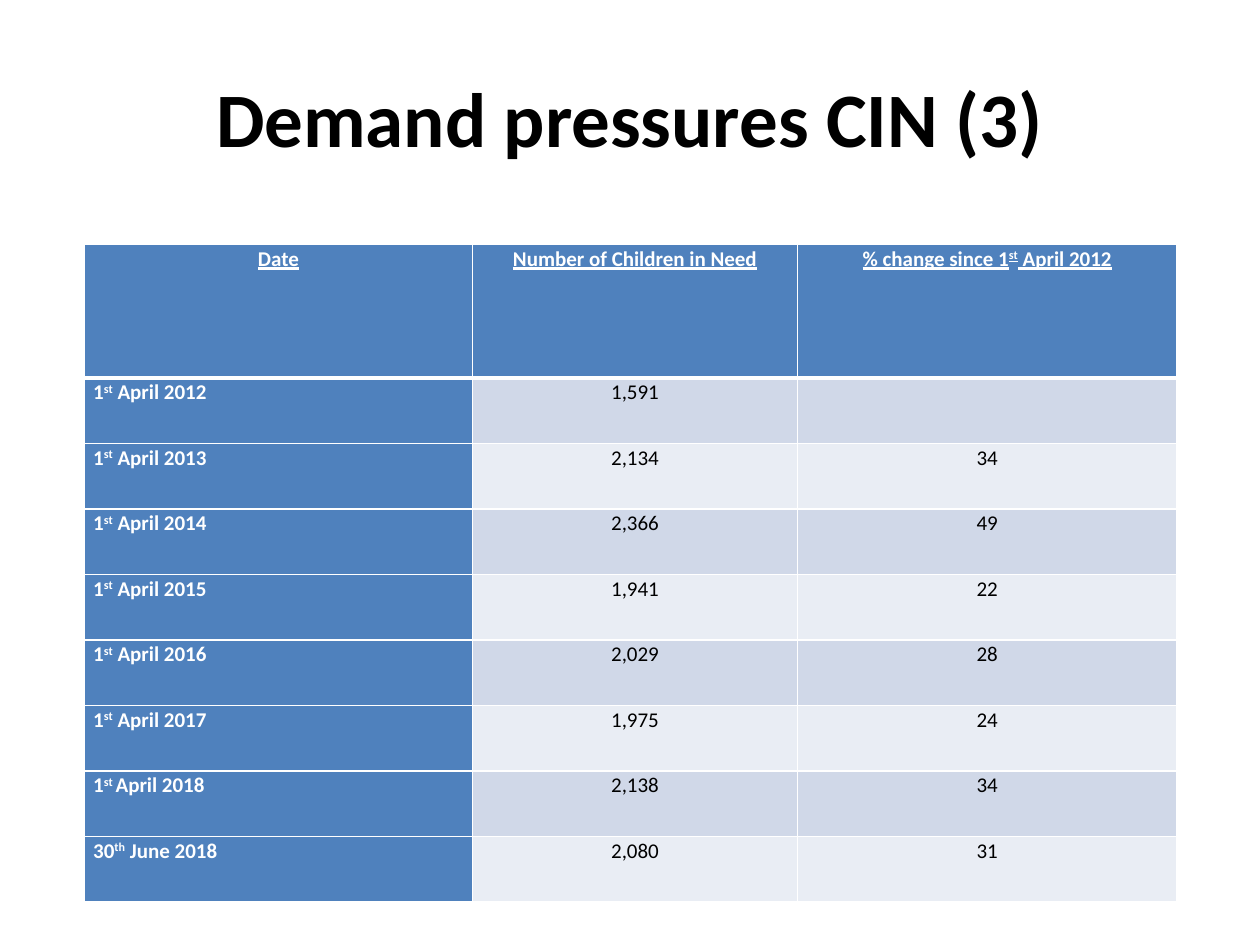
from dataclasses import dataclass

from lxml.etree import SubElement
from pptx import Presentation
from pptx.dml.color import RGBColor
from pptx.enum.text import MSO_ANCHOR, PP_ALIGN
from pptx.oxml.ns import qn
from pptx.util import Inches, Pt

WIDE, HIGH = 10, 7.5
BLUE, WHITE, BLACK = "4F81BD", "FFFFFF", "000000"
BANDS = ("D0D8E8", "E9EDF4")
COLS = (3.08, 2.58, 3.01)
HEAD, ROW = 1.06, 0.52

# Text between carets is raised.
TITLES = ("Date", "Number of Children in Need", "% change since 1^st^ April 2012")
ROWS = (
    ("1^st^ April 2012", "1,591", ""),
    ("1^st^ April 2013", "2,134", "34"),
    ("1^st^ April 2014", "2,366", "49"),
    ("1^st^ April 2015", "1,941", "22"),
    ("1^st^ April 2016", "2,029", "28"),
    ("1^st^ April 2017", "1,975", "24"),
    ("1^st ^April 2018", "2,138", "34"),
    ("30^th^ June 2018", "2,080", "31"),
)


@dataclass(frozen=True)
class Style:
    size: int
    ink: str
    bold: bool = False
    line: bool = False
    align: PP_ALIGN = PP_ALIGN.CENTER


TITLE = Style(44, BLACK, bold=True)
TOP = Style(12, WHITE, bold=True, line=True)
DATE = Style(12, WHITE, bold=True, align=PP_ALIGN.LEFT)
COUNT = Style(12, BLACK)


def paint(color, code: str) -> None:
    color.rgb = RGBColor.from_string(code)


def write(frame, text: str, style: Style) -> None:
    """Add the text run by run, raising each part between carets."""
    para = frame.paragraphs[0]
    para.alignment = style.align
    for i, part in enumerate(text.split("^")):
        if not part:
            continue
        run = para.add_run()
        run.text = part
        font = run.font
        font.name, font.size = "Calibri", Pt(style.size)
        font.bold, font.underline = style.bold, style.line
        paint(font.color, style.ink)
        if i % 2:
            run._r.get_or_add_rPr().set("baseline", "30000")


def edge(cell, widths: dict[str, int]) -> None:
    """Draw white borders, which must stand before the fill in the XML."""
    props = cell._tc.get_or_add_tcPr()
    for i, (side, width) in enumerate(widths.items()):
        line = SubElement(props, qn(f"a:ln{side}"), w=str(Pt(width)))
        fill = SubElement(line, qn("a:solidFill"))
        SubElement(fill, qn("a:srgbClr"), val=WHITE)
        props.insert(i, line)


def dress(cell, text: str, style: Style, fill: str, row: int) -> None:
    cell.margin_left = cell.margin_right = Inches(0.07)
    cell.margin_top = cell.margin_bottom = 0
    cell.fill.solid()
    paint(cell.fill.fore_color, fill)
    edge(cell, {"L": 1, "R": 1, "T": 3 if row == 1 else 1, "B": 1 if row else 3})
    write(cell.text_frame, text, style)
    cell.text_frame.paragraphs[0].line_spacing = 1.07


def add_title(slide) -> None:
    box = slide.shapes.add_textbox(
        Inches(WIDE * 0.05), Inches(HIGH * 0.04), Inches(WIDE * 0.9), Inches(1.25))
    frame = box.text_frame
    frame.word_wrap = True
    frame.vertical_anchor = MSO_ANCHOR.MIDDLE
    write(frame, "Demand pressures CIN (3)", TITLE)


def add_grid(slide) -> None:
    tall = HEAD + ROW * len(ROWS)
    grid = slide.shapes.add_table(
        len(ROWS) + 1, len(COLS), Inches(0.67), Inches(1.94),
        Inches(sum(COLS)), Inches(tall)).table
    for col, width in zip(grid.columns, COLS):
        col.width = Inches(width)
    for r, texts in enumerate((TITLES, *ROWS)):
        grid.rows[r].height = Inches(ROW if r else HEAD)
        for c, text in enumerate(texts):
            style = TOP if r == 0 else COUNT if c else DATE
            fill = BANDS[(r - 1) % 2] if r and c else BLUE
            dress(grid.cell(r, c), text, style, fill, r)


def main() -> None:
    deck = Presentation()
    deck.slide_width, deck.slide_height = Inches(WIDE), Inches(HIGH)
    slide = deck.slides.add_slide(deck.slide_layouts[6])
    add_title(slide)
    add_grid(slide)
    deck.save("out.pptx")


if __name__ == "__main__":
    main()
